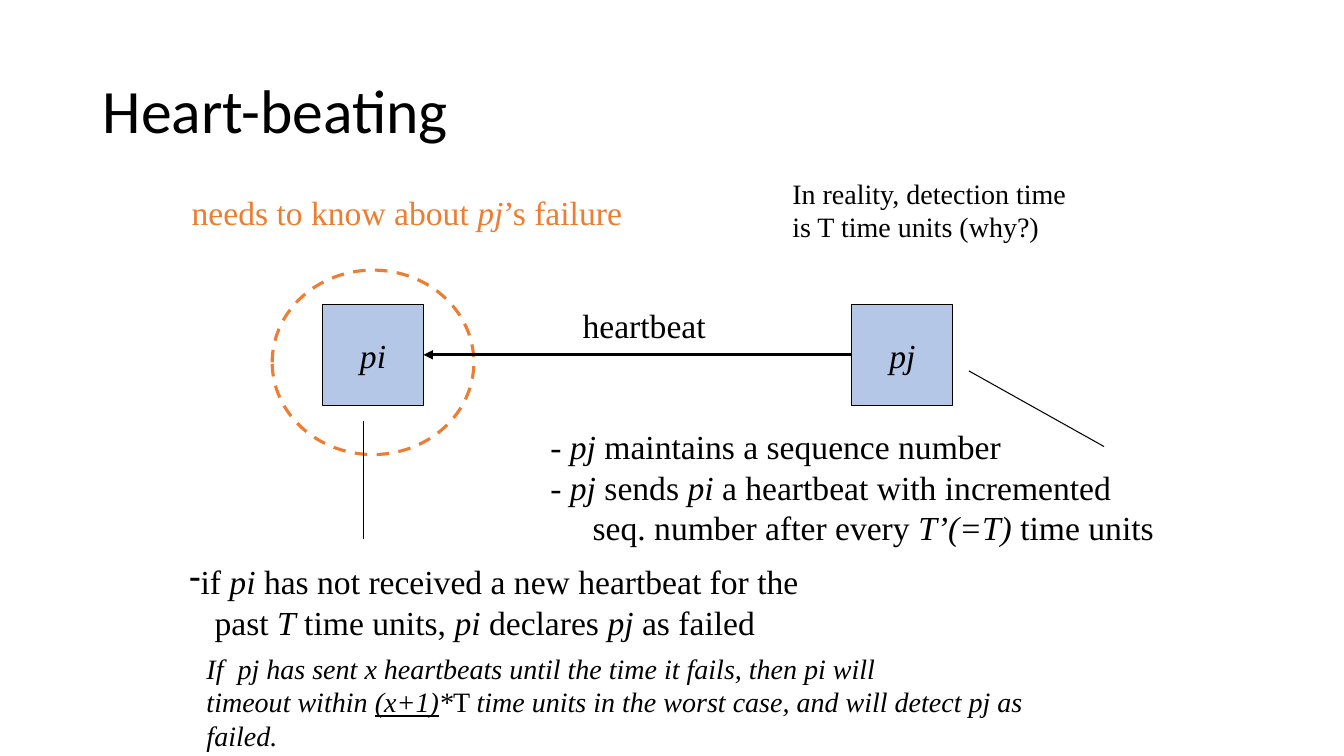
from lxml.etree import SubElement
from pptx import Presentation
from pptx.dml.color import RGBColor
from pptx.enum.dml import MSO_LINE
from pptx.enum.shapes import MSO_CONNECTOR, MSO_SHAPE
from pptx.enum.text import MSO_ANCHOR, PP_ALIGN
from pptx.oxml.ns import qn
from pptx.util import Inches, Pt

ITALIC = {"italic": True}
UPRIGHT = {"italic": False}
UNDERLINED = {"underline": True}


def color(hex_code):
    return RGBColor.from_string(hex_code)


def set_values(target, values):
    for name, value in values.items():
        setattr(target, name, value)


class HeartbeatSlide:
    black, orange, blue = "000000", "ED7D31", "B4C7E7"
    serif, sans = "Times New Roman", "Calibri"

    def __init__(self, slide):
        self.shapes = slide.shapes

    def add_words(self, frame, paragraphs, size=24, ink=black, font=serif,
                  base=UPRIGHT, layout=None, indents=()):
        """Each paragraph is a list of strings or (string, format) pairs."""
        for index, parts in enumerate(paragraphs):
            paragraph = frame.paragraphs[0] if index == 0 else frame.add_paragraph()
            set_values(paragraph, layout or {})
            if index < len(indents) and indents[index]:
                paragraph._p.get_or_add_pPr().set("marL", str(Inches(indents[index])))
            for part in parts:
                words, extra = (part, {}) if isinstance(part, str) else part
                run = paragraph.add_run()
                run.text = words
                set_values(run.font, {"size": Pt(size), "name": font, **base, **extra})
                run.font.color.rgb = color(ink)

    def text(self, box, paragraphs, wrap=False, anchor=MSO_ANCHOR.TOP, **style):
        frame = self.shapes.add_textbox(*map(Inches, box)).text_frame
        set_values(frame, {"word_wrap": wrap, "vertical_anchor": anchor})
        self.add_words(frame, paragraphs, **style)
        return frame

    def outline(self, preset, box, ink, width, fill=None, dash=None):
        shape = self.shapes.add_shape(preset, *map(Inches, box))
        shape.shadow.inherit = False
        if fill:
            shape.fill.solid()
            shape.fill.fore_color.rgb = color(fill)
        else:
            shape.fill.background()
        shape.line.color.rgb = color(ink)
        set_values(shape.line, {"width": Pt(width), "dash_style": dash})
        return shape

    def process(self, name, left):
        box = self.outline(MSO_SHAPE.RECTANGLE, (left, 3.02, 1, 1),
                           self.black, 0.75, fill=self.blue)
        set_values(box.text_frame,
                   {"word_wrap": False, "vertical_anchor": MSO_ANCHOR.MIDDLE})
        self.add_words(box.text_frame, [[name]], base=ITALIC,
                       layout={"alignment": PP_ALIGN.CENTER})

    def line(self, start, end, width=0.75, arrow=False):
        link = self.shapes.add_connector(MSO_CONNECTOR.STRAIGHT, *map(Inches, start + end))
        link.line.color.rgb = color(self.black)
        link.line.width = Pt(width)
        properties = link._element.spPr
        if arrow:
            SubElement(properties.find(qn("a:ln")), qn("a:tailEnd"), type="triangle")
        SubElement(properties, qn("a:effectLst"))

    def dash_bullet(self, paragraph):
        SubElement(paragraph._p.get_or_add_pPr(), qn("a:buChar"), char="-")


def main():
    deck = Presentation()
    set_values(deck, {"slide_width": Inches(13.33), "slide_height": Inches(7.5)})
    page = HeartbeatSlide(deck.slides.add_slide(deck.slide_layouts[6]))
    pi, pj = ("pi", ITALIC), ("pj", ITALIC)

    # Title
    page.text((0.92, 0.4, 11.5, 1.45), [["Heart-beating"]], wrap=True,
              anchor=MSO_ANCHOR.MIDDLE, size=44, font=page.sans,
              layout={"line_spacing": 0.9})

    # The two processes and the observer's ring
    page.process("pi", 3.2)
    page.process("pj", 8.45)
    page.text((1.78, 1.85, 4.51, 0.91), [["needs to know about ", pj, "’s failure"]],
              ink=page.orange, layout={"alignment": PP_ALIGN.CENTER})
    page.outline(MSO_SHAPE.OVAL, (2.7, 2.68, 2, 1.83), page.orange, 2.25,
                 dash=MSO_LINE.DASH)

    # Heartbeat message
    page.line((8.45, 3.52), (4.2, 3.52), width=2.25, arrow=True)
    page.text((5.68, 2.98, 1.42, 0.5), [["heartbeat"]])

    # Sender rule
    page.text((5.36, 4.18, 6.23, 1.31), [
        ["- ", pj, " maintains a sequence number"],
        ["- ", pj, " sends ", pi, " a heartbeat with incremented"],
        ["seq. number after every ", ("T’(=T) ", ITALIC), "time units"],
    ], indents=(0, 0, 0.42))

    # Receiver rule
    receiver_rule = page.text((1.78, 5.52, 6.38, 0.91), [
        ["if ", pi, " has not received a new heartbeat for the"],
        ["past ", ("T", ITALIC), " time units, ", pi, " declares ", pj, " as failed"],
    ], indents=(0, 0.25))
    page.dash_bullet(receiver_rule.paragraphs[0])

    # Leaders from the processes to their rules
    page.line((3.61, 4.18), (3.61, 5.35))
    page.line((9.61, 3.68), (10.95, 4.43))

    # Detection time notes
    page.text((1.95, 6.41, 9.04, 0.77), [
        ["If  pj has sent x heartbeats until the time it fails, then pi will"],
        ["timeout within ", ("(x+1)", UNDERLINED), "*", ("T ", UPRIGHT),
         "time units in the worst case, and will detect pj as failed."],
    ], wrap=True, size=20, base=ITALIC)
    page.text((7.76, 1.7, 2.93, 0.77),
              [["In reality, detection time"], ["is T time units (why?)"]], size=20)

    deck.save("out.pptx")


if __name__ == "__main__":
    main()
